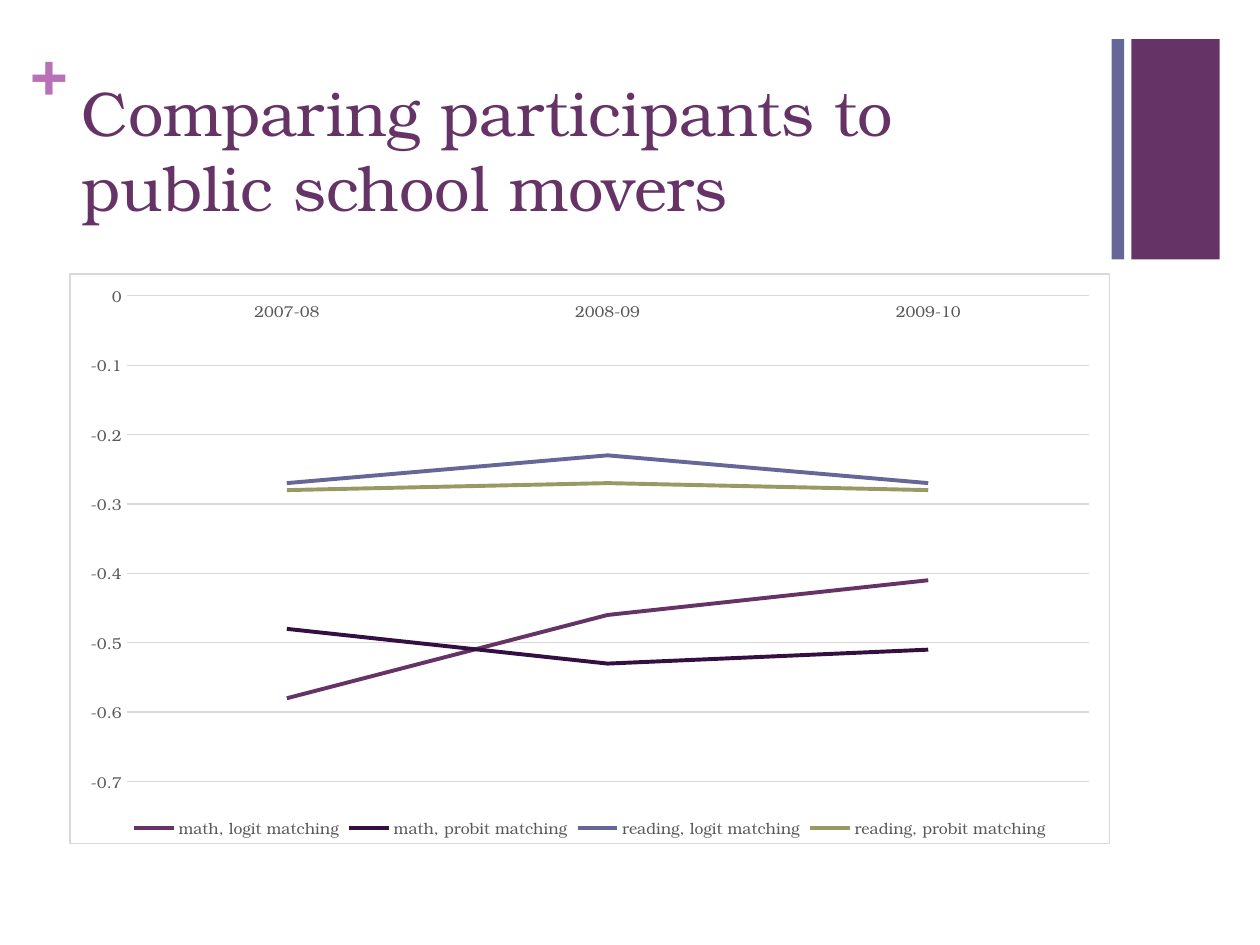
"""Build a slide with a title, side bars and a line chart of matching results."""
from lxml import etree
from pptx import Presentation
from pptx.chart import data
from pptx.dml.color import RGBColor
from pptx.enum import chart as ch, shapes, text
from pptx.oxml import parse_xml
from pptx.util import Pt

PLUM = RGBColor(0x66, 0x33, 0x66)
DARK = RGBColor(0x33, 0x0F, 0x42)
BLUE = RGBColor(0x66, 0x66, 0x99)
OLIVE = RGBColor(0x99, 0x99, 0x66)
PINK = RGBColor(0xB8, 0x70, 0xB8)
GREY = RGBColor(0x59, 0x59, 0x59)
RULE = RGBColor(0xD9, 0xD9, 0xD9)
WHITE = RGBColor(0xFF, 0xFF, 0xFF)
FACE = "TeX Gyre Bonum"
YEARS = ["2007-08", "2008-09", "2009-10"]
LINES = [
    ("math, logit matching", (-0.58, -0.46, -0.41), PLUM),
    ("math, probit matching", (-0.48, -0.53, -0.51), DARK),
    ("reading, logit matching", (-0.27, -0.23, -0.27), BLUE),
    ("reading, probit matching", (-0.28, -0.27, -0.28), OLIVE),
]
FRAME = """<c:spPr
 xmlns:c="http://schemas.openxmlformats.org/drawingml/2006/chart"
 xmlns:a="http://schemas.openxmlformats.org/drawingml/2006/main">
<a:solidFill><a:srgbClr val="{}"/></a:solidFill>
<a:ln w="9525"><a:solidFill><a:srgbClr val="{}"/></a:solidFill></a:ln>
</c:spPr>"""


def style(font, size, color, bold=False):
    font.name, font.size, font.bold = FACE, Pt(size), bold
    font.color.rgb = color


def stroke(line, color, width):
    line.color.rgb = color
    line.width = Pt(width)


def add_bar(slide, left, width, color):
    bar = slide.shapes.add_shape(
        shapes.MSO_SHAPE.RECTANGLE, Pt(left), Pt(22.3), Pt(width), Pt(126))
    bar.shadow.inherit = False
    bar.fill.solid()
    bar.fill.fore_color.rgb = color
    bar.line.fill.background()


def add_text(slide, words, place, color, inset=(0, 0), bold=False, wrap=True):
    box = slide.shapes.add_textbox(*map(Pt, place))
    frame = box.text_frame
    frame.word_wrap = wrap
    frame.vertical_anchor = text.MSO_ANCHOR.TOP
    frame.margin_left = frame.margin_right = Pt(inset[0])
    frame.margin_top = frame.margin_bottom = Pt(inset[1])
    frame.text = words
    style(frame.paragraphs[0].runs[0].font, 36, color, bold)


def add_graph(slide, place):
    table = data.CategoryChartData()
    table.categories = YEARS
    for name, vals, _ in LINES:
        table.add_series(name, vals)
    chart = slide.shapes.add_chart(
        ch.XL_CHART_TYPE.LINE, *map(Pt, place), table).chart
    style(chart.font, 10, GREY)
    chart.has_title = False
    chart.has_legend = True
    chart.legend.position = ch.XL_LEGEND_POSITION.BOTTOM
    chart.legend.include_in_layout = False
    style(chart.legend.font, 9, GREY)
    for axis in (chart.category_axis, chart.value_axis):
        axis.major_tick_mark = axis.minor_tick_mark = ch.XL_TICK_MARK.NONE
        style(axis.tick_labels.font, 9, GREY)
    stroke(chart.category_axis.format.line, RULE, 0.75)
    scale = chart.value_axis
    scale.minimum_scale, scale.maximum_scale, scale.major_unit = -0.7, 0, 0.1
    scale.format.line.fill.background()
    scale.has_major_gridlines = True
    stroke(scale.major_gridlines.format.line, RULE, 0.75)
    plot = chart.plots[0]
    plot.vary_by_categories = False
    for series, (_, _, color) in zip(plot.series, LINES):
        series.smooth = False
        series.marker.style = ch.XL_MARKER_STYLE.NONE
        stroke(series.format.line, color, 2.25)
    root = chart.element
    area = root.find(etree.QName(root.nsmap["c"], "chart").text)
    area.addnext(parse_xml(FRAME.format(WHITE, RULE)))


def main():
    deck = Presentation()
    deck.slide_width, deck.slide_height = Pt(720), Pt(540)
    slide = deck.slides.add_slide(deck.slide_layouts[6])
    add_bar(slide, 646.5, 50.5, PLUM)
    add_text(slide, "+", (17.3, 18, 20.9, 43.9), PINK, bold=True, wrap=False)
    add_bar(slide, 635.2, 7.2, BLUE)
    add_text(slide, "Comparing participants to public school movers",
             (39.6, 38.2, 594.7, 87.8), PLUM, inset=(7.2, 3.6))
    add_graph(slide, (39.6, 156.2, 594.7, 326.2))
    deck.save("out.pptx")


if __name__ == "__main__":
    main()
